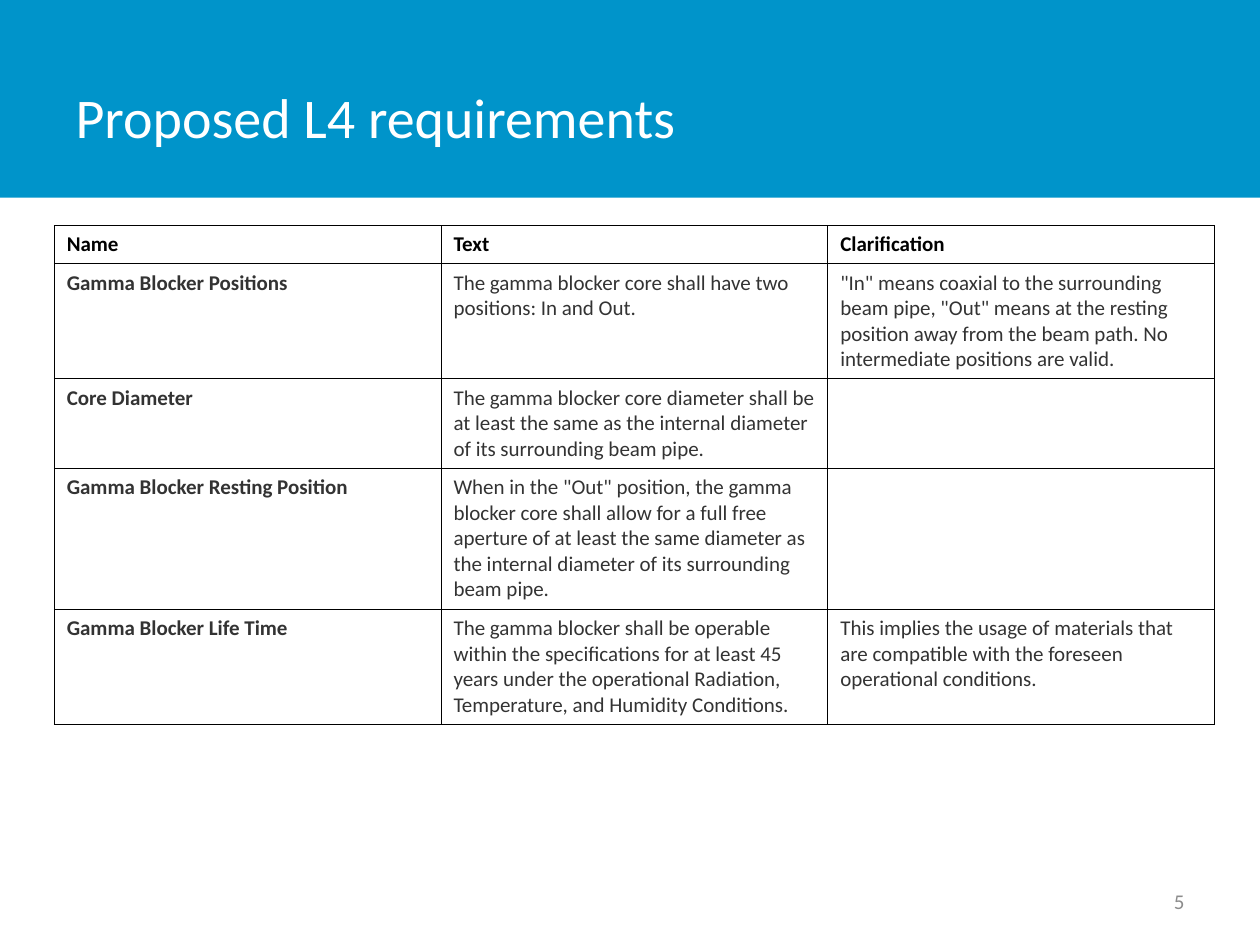
import dataclasses

import lxml.etree
import pptx
import pptx.dml.color
import pptx.enum.shapes
import pptx.enum.text
import pptx.oxml.ns
import pptx.util

Inches = pptx.util.Inches
Align = pptx.enum.text.PP_ALIGN
Anchor = pptx.enum.text.MSO_ANCHOR


@dataclasses.dataclass(frozen=True)
class Theme:
    font: str = "Calibri"
    band: str = "0094CA"
    title: str = "FFFFFF"
    header: str = "000000"
    body: str = "333333"
    border: str = "000000"
    number: str = "8C8C8C"
    title_size: int = 32
    body_size: int = 12
    border_width: float = 0.5


class SlideBuilder:
    def __init__(self, slide, theme):
        self.slide = slide
        self.theme = theme

    def fill_text(self, frame, text, size, color, bold=False, align=Align.LEFT):
        frame.word_wrap = True
        frame.text = text
        for para in frame.paragraphs:
            para.alignment = align
            for span in para.runs:
                span.font.name = self.theme.font
                span.font.size = pptx.util.Pt(size)
                span.font.bold = bold
                span.font.color.rgb = pptx.dml.color.RGBColor.from_string(color)

    def band(self, left, top, width, height):
        box = self.slide.shapes.add_shape(
            pptx.enum.shapes.MSO_SHAPE.RECTANGLE,
            Inches(left), Inches(top), Inches(width), Inches(height))
        box.shadow.inherit = False
        box.fill.solid()
        box.fill.fore_color.rgb = pptx.dml.color.RGBColor.from_string(self.theme.band)
        box.line.fill.background()
        # Send behind the title placeholder
        self.slide.shapes._spTree.insert(2, box._element)

    def title(self, text, left, top, width, height):
        box = self.slide.shapes.title
        box.left, box.top = Inches(left), Inches(top)
        box.width, box.height = Inches(width), Inches(height)
        box.text_frame.vertical_anchor = Anchor.MIDDLE
        self.fill_text(box.text_frame, text, self.theme.title_size, self.theme.title)

    def text(self, text, left, top, width, height, color, align):
        box = self.slide.shapes.add_textbox(
            Inches(left), Inches(top), Inches(width), Inches(height))
        box.text_frame.vertical_anchor = Anchor.MIDDLE
        self.fill_text(box.text_frame, text, self.theme.body_size, color, align=align)

    def cell_borders(self, cell):
        properties = cell._tc.get_or_add_tcPr()
        name = pptx.oxml.ns.qn
        for side in ("a:lnL", "a:lnR", "a:lnT", "a:lnB"):
            line = lxml.etree.SubElement(properties, name(side))
            line.set("w", str(int(pptx.util.Pt(self.theme.border_width))))
            fill = lxml.etree.SubElement(line, name("a:solidFill"))
            lxml.etree.SubElement(fill, name("a:srgbClr")).set("val", self.theme.border)

    def table(self, rows, left, top, width, row_heights):
        column_count = len(rows[0])
        table = self.slide.shapes.add_table(
            len(rows), column_count, Inches(left), Inches(top),
            Inches(width), Inches(sum(row_heights))).table
        table.horz_banding = False
        for column in table.columns:
            column.width = Inches(width / column_count)
        for row_index, (values, height) in enumerate(zip(rows, row_heights)):
            table.rows[row_index].height = Inches(height)
            is_header = row_index == 0
            color = self.theme.header if is_header else self.theme.body
            for column_index, value in enumerate(values):
                cell = table.cell(row_index, column_index)
                self.cell_borders(cell)
                cell.fill.background()
                self.fill_text(cell.text_frame, value, self.theme.body_size, color,
                               bold=is_header or column_index == 0)


REQUIREMENTS = [
    ("Name", "Text", "Clarification"),
    ("Gamma Blocker Positions",
     "The gamma blocker core shall have two positions: In and Out.",
     '"In" means coaxial to the surrounding beam pipe, "Out" means at the resting '
     "position away from the beam path. No intermediate positions are valid."),
    ("Core Diameter",
     "The gamma blocker core diameter shall be at least the same as the internal "
     "diameter of its surrounding beam pipe.",
     ""),
    ("Gamma Blocker Resting Position",
     'When in the "Out" position, the gamma blocker core shall allow for a full free '
     "aperture of at least the same diameter as the internal diameter of its "
     "surrounding beam pipe.",
     ""),
    ("Gamma Blocker Life Time",
     "The gamma blocker shall be operable within the specifications for at least 45 "
     "years under the operational Radiation, Temperature, and Humidity Conditions.",
     "This implies the usage of materials that are compatible with the foreseen "
     "operational conditions."),
]


def main():
    deck = pptx.Presentation()
    deck.slide_width, deck.slide_height = Inches(10), Inches(7.5)
    theme = Theme()
    page = SlideBuilder(deck.slides.add_slide(deck.slide_layouts[5]), theme)

    # Heading
    page.band(0, 0, 10, 1.57)
    page.title("Proposed L4 requirements", 0.5, 0.3, 7.81, 1.25)

    # Requirements table
    page.table(REQUIREMENTS, 0.43, 1.79, 9.21, (0.3, 0.91, 0.71, 1.12, 0.91))

    # Slide number
    page.text("5", 7.17, 6.95, 2.33, 0.4, theme.number, Align.RIGHT)

    deck.save("out.pptx")


if __name__ == "__main__":
    main()
